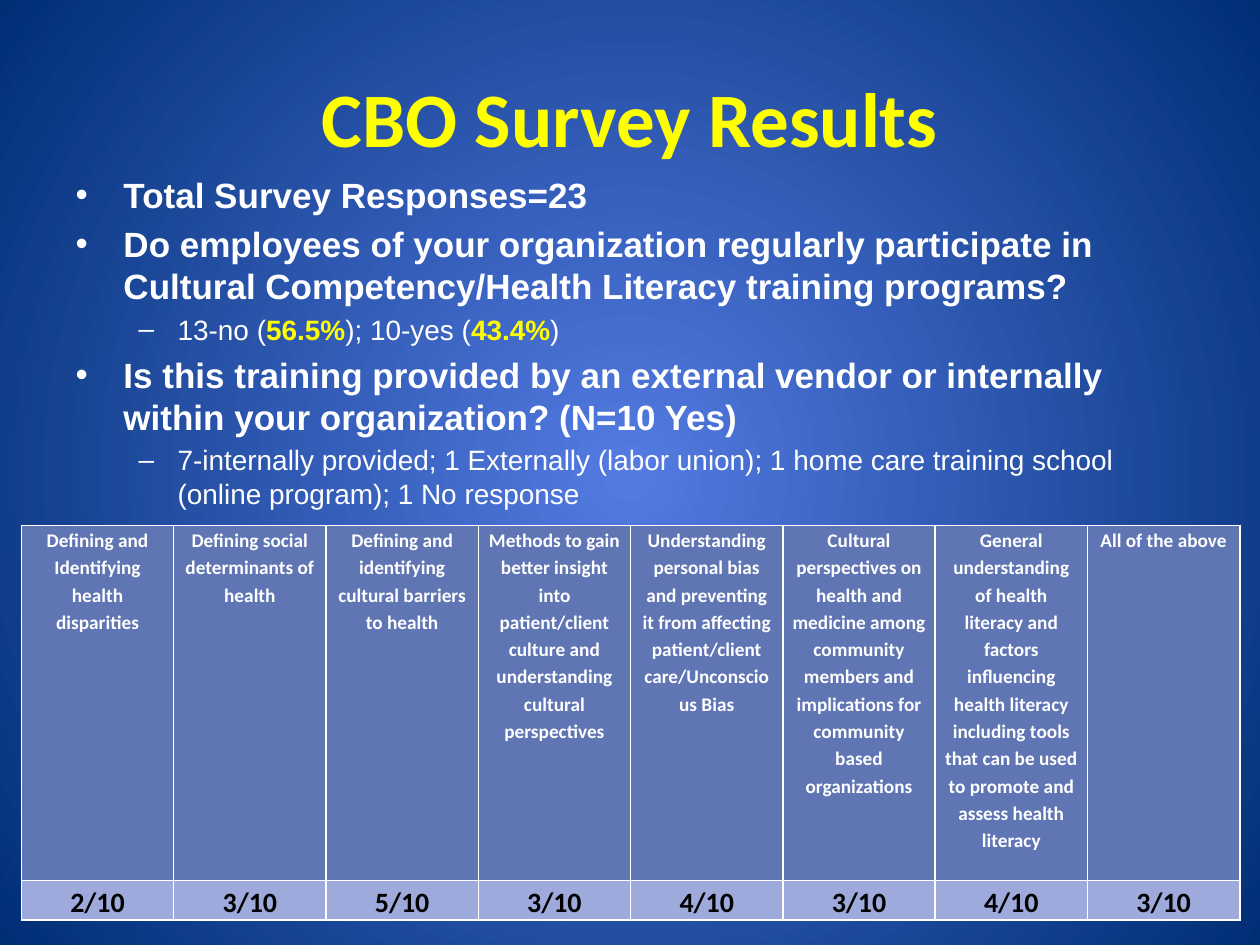
from lxml.etree import SubElement
from pptx import Presentation
from pptx.dml.color import RGBColor
from pptx.enum.text import MSO_ANCHOR, MSO_AUTO_SIZE, PP_ALIGN
from pptx.oxml.ns import qn
from pptx.util import Inches, Pt

WHITE = RGBColor(0xFF, 0xFF, 0xFF)
BLACK = RGBColor(0, 0, 0)
YELLOW = RGBColor(0xFF, 0xFF, 0)
GLOW = RGBColor(0x54, 0x7B, 0xE2)
NAVY = RGBColor(0, 0x2E, 0x75)
TOPIC_FILL = RGBColor(0x60, 0x76, 0xB4)
COUNT_FILL = RGBColor(0x9E, 0xAA, 0xDC)

INDENTS = [(0.38, -0.38), (0.81, -0.31)]
BULLETS = [
    (0, ["Total Survey Responses=23"]),
    (0, ["Do employees of your organization regularly participate in "
         "Cultural Competency/Health Literacy training programs?"]),
    (1, ["13-no (", "56.5%", "); 10-yes (", "43.4%", ")"]),
    (0, ["Is this training provided by an external vendor or internally "
         "within your organization? (N=10 Yes)"]),
    (1, ["7-internally provided; 1 Externally (labor union); 1 home care training school "
         "(online program); 1 No response"]),
]
TOPICS = [
    ("Defining and Identifying health disparities", "2/10"),
    ("Defining social determinants of health", "3/10"),
    ("Defining and identifying cultural barriers to health", "5/10"),
    ("Methods to gain better insight into patient/client culture and "
     "understanding cultural perspectives", "3/10"),
    ("Understanding personal bias and preventing it from affecting "
     "patient/client care/Unconscious Bias", "4/10"),
    ("Cultural perspectives on health and medicine among community members "
     "and implications for community based organizations", "3/10"),
    ("General understanding of health literacy and factors influencing health literacy "
     "including tools that can be used to promote and assess health literacy", "4/10"),
    ("All of the above", "3/10"),
]


def add_text(p, text, size=20, font="Arial", color=WHITE, bold=True):
    """Append a formatted run to a paragraph."""
    r = p.add_run()
    r.text = text
    r.font.size, r.font.name, r.font.bold = Pt(size), font, bold
    r.font.color.rgb = color


def place(sp, box):
    """Move a shape to a box of left, top, width and height in inches."""
    sp.left, sp.top, sp.width, sp.height = map(Inches, box)


def set_background(s):
    """Fill the slide with a gradient glowing from the centre."""
    fill = s.background.fill
    fill.gradient()
    for stop, color in zip(fill.gradient_stops, (GLOW, NAVY)):
        stop.color.rgb = color
    stops = fill.gradient_stops
    stops[0].position, stops[1].position = 0, 1
    grad = s.element.find(".//" + qn("a:gradFill"))
    grad.remove(grad.find(qn("a:lin")))
    radial = SubElement(grad, qn("a:path"), {"path": "circle"})
    SubElement(radial, qn("a:fillToRect"), {side: "50000" for side in "ltrb"})


def fill_title(sp, box, text):
    """Place the title placeholder and write its text."""
    place(sp, box)
    tf = sp.text_frame
    tf.vertical_anchor = MSO_ANCHOR.MIDDLE
    p = tf.paragraphs[0]
    p.alignment = PP_ALIGN.CENTER
    add_text(p, text, size=44, font="Calibri", color=YELLOW)


def fill_body(sp, box, bullets):
    """Place the body placeholder and write the two-level list."""
    place(sp, box)
    tf = sp.text_frame
    tf.auto_size = MSO_AUTO_SIZE.NONE
    for i, (level, parts) in enumerate(bullets):
        p = tf.paragraphs[0] if i == 0 else tf.add_paragraph()
        p.level = level
        margin, indent = INDENTS[level]
        pPr = p._p.get_or_add_pPr()
        pPr.set("marL", str(Inches(margin)))
        pPr.set("indent", str(Inches(indent)))
        if i == 0:
            p.space_before = Pt(0)
        for part in parts:
            rate = part.endswith("%")
            add_text(p, part, size=16 if level else 20,
                     color=YELLOW if rate else WHITE, bold=rate or level == 0)


def add_borders(cell):
    """Draw thin white lines on all sides of a cell."""
    tcPr = cell._tc.get_or_add_tcPr()
    for i, side in enumerate(("a:lnL", "a:lnR", "a:lnT", "a:lnB")):
        ln = tcPr.makeelement(qn(side), {"w": str(Pt(1))})
        solid = SubElement(ln, qn("a:solidFill"))
        SubElement(solid, qn("a:srgbClr"), {"val": str(WHITE)})
        tcPr.insert(i, ln)


def fill_cell(cell, text, fill, **fmt):
    """Write one centred table cell."""
    cell.fill.solid()
    cell.fill.fore_color.rgb = fill
    cell.margin_left = cell.margin_right = Inches(0.07)
    cell.margin_top = cell.margin_bottom = 0
    p = cell.text_frame.paragraphs[0]
    p.alignment, p.line_spacing = PP_ALIGN.CENTER, 1.15
    add_text(p, text, font="Calibri", **fmt)
    add_borders(cell)


def add_topic_table(s, box, topics, count_share=0.1):
    """Add the table of training topics with a count under each."""
    left, top, width, height = map(Inches, box)
    table = s.shapes.add_table(2, len(topics), left, top, width, height).table
    table.rows[1].height = int(height * count_share)
    table.rows[0].height = height - table.rows[1].height
    for i, (topic, count) in enumerate(topics):
        table.columns[i].width = width // len(topics)
        fill_cell(table.cell(0, i), topic, TOPIC_FILL, size=11)
        fill_cell(table.cell(1, i), count, COUNT_FILL, size=16, color=BLACK)


def main():
    """Build and save the survey slide."""
    prs = Presentation()
    prs.slide_width, prs.slide_height = Inches(10), Inches(7.5)
    s = prs.slides.add_slide(prs.slide_layouts[1])
    set_background(s)
    fill_title(s.shapes.title, (0.5, 0.3, 9, 1.25), "CBO Survey Results")
    fill_body(s.placeholders[1], (0.5, 1.33, 9, 6), BULLETS)
    add_topic_table(s, (0.17, 4.17, 9.67, 3.13), TOPICS)
    prs.save("out.pptx")


if __name__ == "__main__":
    main()
